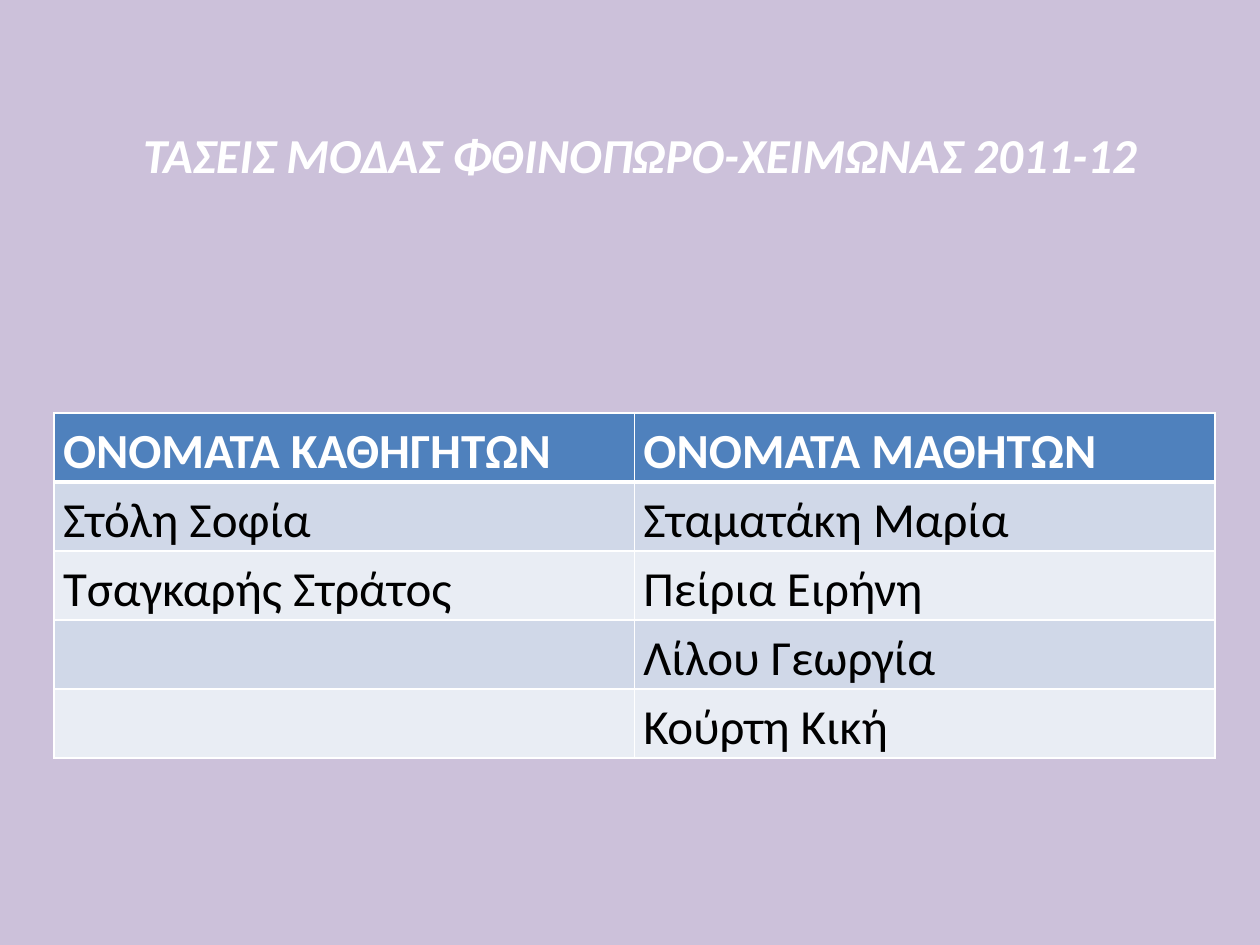
"""Build the fashion trends slide with its table of teachers and students."""
import pptx
import pptx.dml.color
import pptx.enum.text
import pptx.oxml.ns
import pptx.util
from lxml import etree

PX = 914400 / 126


def px(length):
    return pptx.util.Emu(round(length * PX))


def color(value):
    return pptx.dml.color.RGBColor.from_string(value)


deck = pptx.Presentation()
deck.slide_width, deck.slide_height = px(1260), px(945)
slide = deck.slides.add_slide(deck.slide_layouts[5])
slide.background.fill.solid()
slide.background.fill.fore_color.rgb = color("CCC1DA")

heading = slide.shapes.title
heading.left, heading.top, heading.width, heading.height = px(64), px(125), px(1134), px(118)
heading_frame = {
    "auto_size": pptx.enum.text.MSO_AUTO_SIZE.NONE,
    "vertical_anchor": pptx.enum.text.MSO_ANCHOR.TOP,
    "margin_left": px(18),
    "margin_right": 0,
    "margin_top": 0,
    "margin_bottom": 0,
}
for key, value in heading_frame.items():
    setattr(heading.text_frame, key, value)
headline = heading.text_frame.paragraphs[0]
headline.alignment = pptx.enum.text.PP_ALIGN.CENTER
headline_run = headline.add_run()
headline_run.text = "ΤΑΣΕΙΣ ΜΟΔΑΣ ΦΘΙΝΟΠΩΡΟ-ΧΕΙΜΩΝΑΣ 2011-12"
headline_font = {"name": "Calibri", "size": pptx.util.Pt(27.9), "bold": True, "italic": True}
for key, value in headline_font.items():
    setattr(headline_run.font, key, value)
headline_run.font.color.rgb = color("FFFFFF")

participants = [
    ("ΟΝΟΜΑΤΑ ΚΑΘΗΓΗΤΩΝ", "ΟΝΟΜΑΤΑ ΜΑΘΗΤΩΝ"),
    ("Στόλη Σοφία", "Σταματάκη Μαρία"),
    ("Τσαγκαρής Στράτος", "Πείρια Ειρήνη"),
    ("", "Λίλου Γεωργία"),
    ("", "Κούρτη Κική"),
]
roster = slide.shapes.add_table(
    len(participants), 2, px(54), px(413), px(1161), px(69 * len(participants))
).table
for column in roster.columns:
    column.width = px(580.5)
for row in roster.rows:
    row.height = px(69)

cell_margins = {"margin_left": px(9), "margin_right": px(9), "margin_top": 0, "margin_bottom": 0}
for row_index, names in enumerate(participants):
    is_header = row_index == 0
    band = "4F81BD" if is_header else ("E9EDF4", "D0D8E8")[row_index % 2]
    widths = {"lnL": 1, "lnR": 1, "lnT": 3 if row_index == 1 else 1, "lnB": 3 if is_header else 1}
    name_font = {"name": "Calibri", "size": pptx.util.Pt(28), "bold": is_header}
    for column_index, name in enumerate(names):
        cell = roster.cell(row_index, column_index)
        for key, value in cell_margins.items():
            setattr(cell, key, value)
        properties = cell._tc.get_or_add_tcPr()
        for side, width in widths.items():
            border = etree.SubElement(
                properties, pptx.oxml.ns.qn(f"a:{side}"), w=str(pptx.util.Pt(width))
            )
            border_fill = etree.SubElement(border, pptx.oxml.ns.qn("a:solidFill"))
            etree.SubElement(border_fill, pptx.oxml.ns.qn("a:srgbClr"), val="FFFFFF")
        cell.fill.solid()
        cell.fill.fore_color.rgb = color(band)
        if name:
            entry = cell.text_frame.paragraphs[0]
            entry.line_spacing = 1.15
            entry_run = entry.add_run()
            entry_run.text = name
            for key, value in name_font.items():
                setattr(entry_run.font, key, value)
            entry_run.font.color.rgb = color("FFFFFF" if is_header else "000000")

deck.save("out.pptx")
